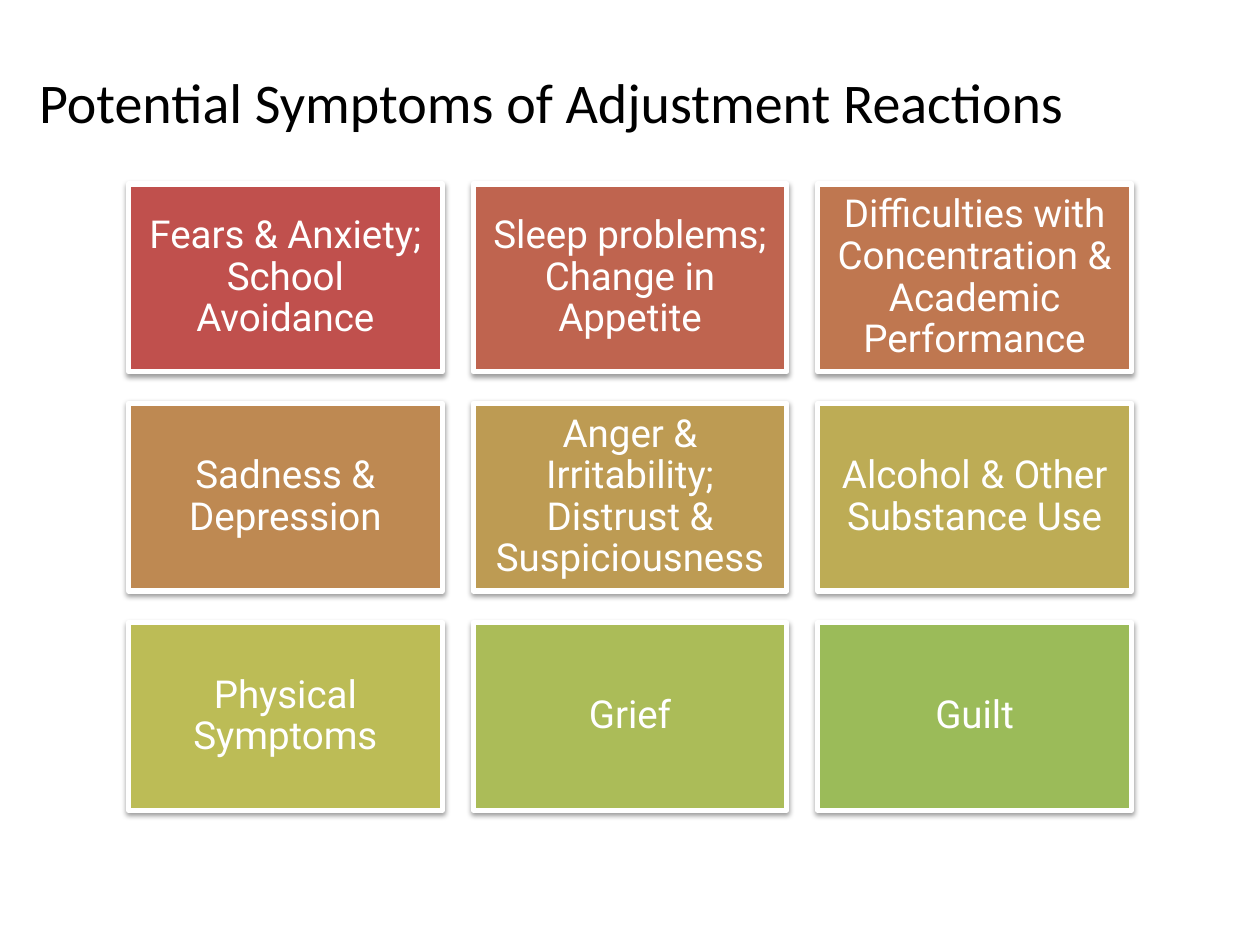
from dataclasses import dataclass

from lxml import etree
from pptx import Presentation
from pptx.dml.color import RGBColor
from pptx.enum.shapes import MSO_SHAPE
from pptx.enum.text import MSO_ANCHOR, PP_ALIGN
from pptx.oxml.ns import qn
from pptx.shapes.autoshape import Shape
from pptx.slide import Slide
from pptx.util import Inches, Pt

RECT = MSO_SHAPE.RECTANGLE
MIDDLE = MSO_ANCHOR.MIDDLE
LEFT, CENTER = PP_ALIGN.LEFT, PP_ALIGN.CENTER

BLACK = RGBColor(0x00, 0x00, 0x00)
WHITE = RGBColor(0xFF, 0xFF, 0xFF)
COLS = 3
X, Y = 1.02, 1.46
WIDE, HIGH = 2.49, 1.49
STEP_X, STEP_Y = 2.735, 1.74
INSET = Inches(0.09)


@dataclass(frozen=True)
class Card:
    text: str
    fill: RGBColor


CARDS = [
    Card("Fears & Anxiety; School Avoidance", RGBColor(0xC0, 0x50, 0x4D)),
    Card("Sleep problems; Change in Appetite", RGBColor(0xBF, 0x64, 0x4F)),
    Card("Difficulties with Concentration & Academic Performance", RGBColor(0xBF, 0x77, 0x50)),
    Card("Sadness & Depression", RGBColor(0xBE, 0x89, 0x52)),
    Card("Anger & Irritability; Distrust & Suspiciousness", RGBColor(0xBD, 0x9B, 0x53)),
    Card("Alcohol & Other Substance Use", RGBColor(0xBD, 0xAC, 0x55)),
    Card("Physical Symptoms", RGBColor(0xBC, 0xBC, 0x56)),
    Card("Grief", RGBColor(0xAB, 0xBC, 0x58)),
    Card("Guilt", RGBColor(0x9B, 0xBB, 0x59)),
]


def add_shadow(shape: Shape) -> None:
    shape.shadow.inherit = False
    effects = shape.element.spPr.find(qn("a:effectLst"))
    outer = etree.SubElement(
        effects, qn("a:outerShdw"), blurRad=str(Pt(3.1)), dist=str(Pt(1.6)),
        dir="5400000", rotWithShape="0",
    )
    color = etree.SubElement(outer, qn("a:srgbClr"), val=str(BLACK))
    etree.SubElement(color, qn("a:alpha"), val="38000")


def add_title(slide: Slide, text: str) -> None:
    title = slide.shapes.title
    title.left, title.top = Inches(0.21), Inches(0.42)
    title.width, title.height = Inches(9.31), Inches(0.77)
    frame = title.text_frame
    frame.text = text
    frame.vertical_anchor = MIDDLE
    para = frame.paragraphs[0]
    para.alignment = LEFT
    font = para.runs[0].font
    font.name, font.size = "Calibri", Pt(32)
    font.color.rgb = BLACK


def add_card(slide: Slide, card: Card, row: int, col: int) -> None:
    shape = slide.shapes.add_shape(
        RECT, Inches(X + col * STEP_X), Inches(Y + row * STEP_Y),
        Inches(WIDE), Inches(HIGH),
    )
    shape.fill.solid()
    shape.fill.fore_color.rgb = card.fill
    shape.line.color.rgb = WHITE
    shape.line.width = Pt(3)
    add_shadow(shape)
    frame = shape.text_frame
    frame.text = card.text
    frame.word_wrap = True
    frame.vertical_anchor = MIDDLE
    frame.margin_left = frame.margin_right = INSET
    frame.margin_top = frame.margin_bottom = INSET
    para = frame.paragraphs[0]
    para.alignment = CENTER
    para.line_spacing = 0.9
    font = para.runs[0].font
    font.name, font.size = "Roboto", Pt(22)
    font.color.rgb = WHITE


def main() -> None:
    deck = Presentation()
    deck.slide_width, deck.slide_height = Inches(10), Inches(7.5)
    slide = deck.slides.add_slide(deck.slide_layouts[5])
    add_title(slide, "Potential Symptoms of Adjustment Reactions")
    for index, card in enumerate(CARDS):
        add_card(slide, card, *divmod(index, COLS))
    deck.save("out.pptx")


if __name__ == "__main__":
    main()
